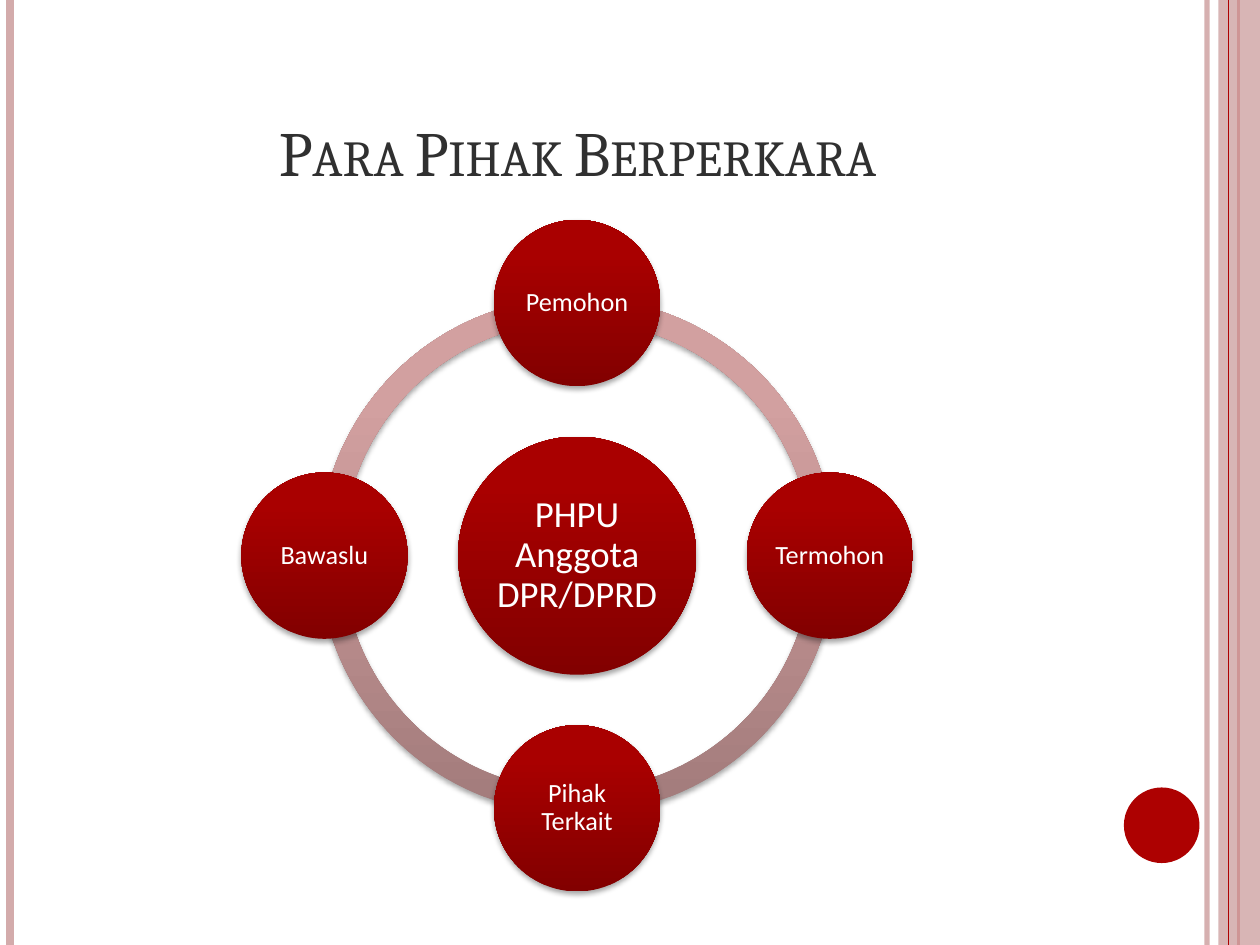
from dataclasses import dataclass
from math import cos, radians, sin

from pptx import Presentation
from pptx import util as u
from pptx.dml.color import RGBColor
from pptx.enum import shapes, text
from pptx.oxml import parse_xml
from pptx.oxml.ns import nsdecls, qn

# Square grid: 100 columns by 75 rows
COLS, ROWS = 100, 75
CELL = u.Inches(10) / COLS

RED = RGBColor(0xAD, 0x01, 0x01)
PINK = RGBColor(0xD3, 0xAB, 0xAB)
INK = RGBColor(0x30, 0x30, 0x30)
WHITE = RGBColor(0xFF, 0xFF, 0xFF)
DISC = ("820000", "A90000", "A90000")
RING = ("A27B7B", "D2A0A0", "D4A0A0")

MID_X, MID_Y = 45.8, 44.1  # centre of the cycle
ORBIT = 20.05  # centre to the middle of each party
SPAN = 41  # width of the ring


@dataclass
class Rule:
    col: float
    color: RGBColor
    width: float
    alpha: int = 100


@dataclass
class Party:
    label: str
    angle: int


RULES = [Rule(95.8, PINK, 3, 93), Rule(0.8, PINK, 4.5), Rule(98.3, RED, 1.5)]
EDGE = Rule(97.5, RED, 0.75)
PARTIES = [Party("Pemohon", 270), Party("Termohon", 0),
           Party("Pihak Terkait", 90), Party("Bawaslu", 180)]


def grid(*cells: float) -> list[int]:
    return [round(c * CELL) for c in cells]


def apply(item, form: dict) -> None:
    for name, value in form.items():
        setattr(item, name, value)


def fade(item, alpha: int) -> None:
    """Set the opacity of the first colour in a shape or line."""
    color = next(item._element.spPr.iter(qn("a:srgbClr")))
    color.append(parse_xml(f'<a:alpha {nsdecls("a")} val="{alpha * 1000}"/>'))


def rule(slide, r: Rule) -> None:
    line = slide.shapes.add_connector(
        shapes.MSO_CONNECTOR.STRAIGHT, *grid(r.col, 0, r.col, ROWS))
    line.line.color.rgb = r.color
    line.line.width = u.Pt(r.width)
    line._element.spPr.append(parse_xml(f'<a:effectLst {nsdecls("a")}/>'))
    if r.alpha < 100:
        fade(line, r.alpha)


def flat(slide, kind, box: tuple, color: RGBColor):
    item = slide.shapes.add_shape(kind, *grid(*box))
    item.shadow.inherit = False
    item.fill.solid()
    item.fill.fore_color.rgb = color
    item.line.fill.background()
    return item


def glossy(slide, kind, x: float, y: float, size: float, tones: tuple):
    """Draw a square shape about x, y with a gradient and a soft shadow."""
    item = slide.shapes.add_shape(
        kind, *grid(x - size / 2, y - size / 2, size, size))
    item.line.fill.background()
    item.shadow.inherit = False
    stops = "".join(f'<a:gs pos="{pos}000"><a:srgbClr val="{tone}"/></a:gs>'
                    for pos, tone in zip((0, 80, 100), tones))
    props = item._element.spPr
    props.find(qn("a:prstGeom")).addnext(parse_xml(
        f'<a:gradFill {nsdecls("a")} rotWithShape="1"><a:gsLst>{stops}</a:gsLst>'
        '<a:lin ang="16200000" scaled="0"/></a:gradFill>'))
    props.find(qn("a:effectLst")).append(parse_xml(
        f'<a:outerShdw {nsdecls("a")} blurRad="{u.Pt(3.1)}" dist="{u.Pt(1.8)}" '
        'dir="5400000" rotWithShape="0"><a:srgbClr val="000000">'
        '<a:alpha val="35000"/></a:srgbClr></a:outerShdw>'))
    return item


def write(item, label: str, pad: float, anchor, space: float, form: dict,
          color: RGBColor):
    frame = item.text_frame
    sides = ("left", "right", "top", "bottom")
    apply(frame, {f"margin_{side}": u.Inches(pad) for side in sides})
    apply(frame, dict(word_wrap=True, vertical_anchor=anchor))
    para = frame.paragraphs[0]
    apply(para, dict(alignment=text.PP_ALIGN.CENTER, line_spacing=space))
    run = para.add_run()
    run.text = label
    apply(run.font, form)
    run.font.color.rgb = color
    return run


def disc(slide, label: str, x: float, y: float, size: float, pts: int,
         pad: float) -> None:
    item = glossy(slide, shapes.MSO_SHAPE.OVAL, x, y, size, DISC)
    write(item, label, pad, text.MSO_ANCHOR.MIDDLE, 0.9,
          dict(name="Calibri", size=u.Pt(pts)), WHITE)


def main() -> None:
    deck = Presentation()
    deck.slide_width, deck.slide_height = grid(COLS, ROWS)
    slide = deck.slides.add_slide(deck.slide_layouts[6])

    # Side bands and corner dot
    for r in RULES:
        rule(slide, r)
    band = flat(slide, shapes.MSO_SHAPE.RECTANGLE, (96.7, 0, 3.3, ROWS), PINK)
    fade(band, 87)
    rule(slide, EDGE)
    flat(slide, shapes.MSO_SHAPE.OVAL, (89.2, 62.5, 6, 6), RED)

    # Title
    title = slide.shapes.add_textbox(*grid(5, 3, 81.7, 12.5))
    run = write(title, "Para Pihak Berperkara", 0.05, text.MSO_ANCHOR.BOTTOM,
                1.0, dict(name="Cambria", size=u.Pt(36)), INK)
    run.font._element.set("cap", "small")

    # Ring in quarter arcs; adjustments count 0.6 per degree
    for start in (180, 90, 0, 270):
        arc = glossy(slide, shapes.MSO_SHAPE.BLOCK_ARC, MID_X, MID_Y, SPAN, RING)
        ends = (start * 0.6, (start + 90) % 360 * 0.6, 0.046)
        for i, value in enumerate(ends):
            arc.adjustments[i] = value

    # Case in the middle, parties around it
    disc(slide, "PHPU Anggota DPR/DPRD", MID_X, MID_Y, 18.9, 21, 0.03)
    for p in PARTIES:
        turn = radians(p.angle)
        disc(slide, p.label, MID_X + ORBIT * cos(turn),
             MID_Y + ORBIT * sin(turn), 13.2, 15, 0.02)

    deck.save("out.pptx")


if __name__ == "__main__":
    main()
